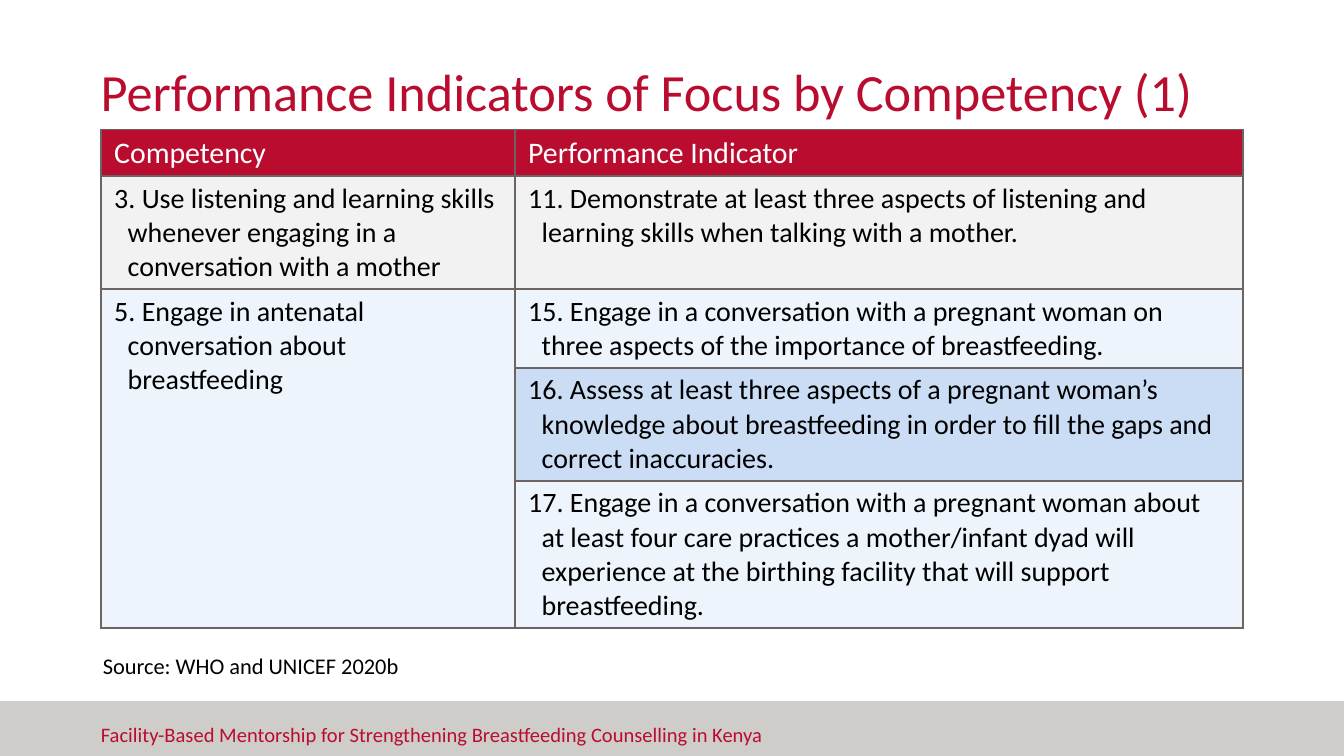
from lxml import etree
from pptx import Presentation
from pptx.dml.color import RGBColor
from pptx.enum.shapes import MSO_SHAPE
from pptx.enum.text import MSO_ANCHOR, PP_ALIGN
from pptx.oxml.ns import qn
from pptx.util import Pt

RECTANGLE = MSO_SHAPE.RECTANGLE
TOP, BOTTOM = MSO_ANCHOR.TOP, MSO_ANCHOR.BOTTOM
LEFT = PP_ALIGN.LEFT

FONT = "Calibri"
RED, WHITE, BLACK = "BA0C2F", "FFFFFF", "000000"
BAND_GREY, BORDER_GREY = "CFCDC9", "6C6463"
ROW_GREY, PALE_BLUE, MID_BLUE = "F2F2F2", "EDF4FB", "CADDF4"

COLUMN_WIDTHS = (221.8, 390.2)
HEADER = ("Competency", "Performance Indicator")
HEADER_HEIGHT = 24.6
# Each competency: text, fill, and its indicators as (text, fill, row height)
COMPETENCIES = [
    ("3. Use listening and learning skills whenever engaging in a conversation with a mother", ROW_GREY, [
        ("11. Demonstrate at least three aspects of listening and learning skills "
         "when talking with a mother.", ROW_GREY, 60.5),
    ]),
    ("5. Engage in antenatal conversation about breastfeeding", PALE_BLUE, [
        ("15. Engage in a conversation with a pregnant woman on three aspects of "
         "the importance of breastfeeding.", PALE_BLUE, 42.3),
        ("16. Assess at least three aspects of a pregnant woman’s knowledge about "
         "breastfeeding in order to fill the gaps and correct inaccuracies.", MID_BLUE, 60.5),
        ("17. Engage in a conversation with a pregnant woman about at least four care "
         "practices a mother/infant dyad will experience at the birthing facility that "
         "will support breastfeeding.", PALE_BLUE, 78.8),
    ]),
]


def color(hex_string):
    return RGBColor.from_string(hex_string)


def write(paragraph, text, size, text_color):
    paragraph.alignment = LEFT
    run = paragraph.add_run()
    run.text = text
    run.font.name = FONT
    run.font.size = Pt(size)
    run.font.bold = False
    run.font.color.rgb = color(text_color)


def add_text(slide, box, text, size, text_color, insets, anchor=TOP):
    frame = slide.shapes.add_textbox(*map(Pt, box)).text_frame
    frame.word_wrap = True
    frame.vertical_anchor = anchor
    frame.margin_left, frame.margin_top, frame.margin_right, frame.margin_bottom = map(Pt, insets)
    write(frame.paragraphs[0], text, size, text_color)


def add_footer(slide, box):
    left, top, width, height = box
    band = slide.shapes.add_shape(RECTANGLE, *map(Pt, box))
    band.shadow.inherit = False
    band.fill.solid()
    band.fill.fore_color.rgb = color(BAND_GREY)
    band.line.fill.background()
    add_text(slide, (left + 54, top + 7.5, 400, height),
             "Facility-Based Mentorship for Strengthening Breastfeeding Counselling in Kenya",
             11, RED, (0, 3.6, 7.2, 3.6))


def add_borders(cell):
    properties = cell._tc.get_or_add_tcPr()
    for position, side in enumerate(("a:lnL", "a:lnR", "a:lnT", "a:lnB")):
        line = etree.Element(qn(side), w=str(Pt(1)))
        fill = etree.SubElement(line, qn("a:solidFill"))
        etree.SubElement(fill, qn("a:srgbClr"), val=BORDER_GREY)
        properties.insert(position, line)


def style_cell(cell, fill):
    cell.margin_left = cell.margin_right = Pt(7.2)
    cell.margin_top = cell.margin_bottom = Pt(2.88)
    cell.vertical_anchor = TOP
    cell.fill.solid()
    cell.fill.fore_color.rgb = color(fill)
    add_borders(cell)


def write_entry(cell, text):
    """Write a numbered entry with a hanging indent."""
    paragraph = cell.text_frame.paragraphs[0]
    properties = paragraph._p.get_or_add_pPr()
    properties.set("marL", str(Pt(7.2)))
    properties.set("indent", str(Pt(-7.2)))
    write(paragraph, text, 15, BLACK)


def add_indicator_table(slide, left, top):
    heights = [HEADER_HEIGHT] + [height for _, _, indicators in COMPETENCIES
                                 for _, _, height in indicators]
    table = slide.shapes.add_table(len(heights), len(COLUMN_WIDTHS), Pt(left), Pt(top),
                                   Pt(sum(COLUMN_WIDTHS)), Pt(sum(heights))).table
    table.horz_banding = False
    for column, width in zip(table.columns, COLUMN_WIDTHS):
        column.width = Pt(width)
    for row, height in zip(table.rows, heights):
        row.height = Pt(height)
    for index, text in enumerate(HEADER):
        cell = table.cell(0, index)
        style_cell(cell, RED)
        write(cell.text_frame.paragraphs[0], text, 16, WHITE)
    first = 1
    for competency, competency_fill, indicators in COMPETENCIES:
        last = first + len(indicators) - 1
        for row, (indicator, fill, _) in enumerate(indicators, first):
            style_cell(table.cell(row, 0), competency_fill)
            style_cell(table.cell(row, 1), fill)
            write_entry(table.cell(row, 1), indicator)
        write_entry(table.cell(first, 0), competency)
        if last > first:
            table.cell(first, 0).merge(table.cell(last, 0))
        first = last + 1


def main():
    presentation = Presentation()
    presentation.slide_width, presentation.slide_height = Pt(720), Pt(405)
    slide = presentation.slides.add_slide(presentation.slide_layouts[6])
    add_footer(slide, (0, 375.6, 720, 29.4))
    add_text(slide, (54, 11.5, 612, 54), "Performance Indicators of Focus by Competency (1)",
             28, RED, (0, 0, 0, 0), BOTTOM)
    add_indicator_table(slide, 54, 69.4)
    add_text(slide, (48, 345.6, 500, 21.8), "Source: WHO and UNICEF 2020b",
             12, BLACK, (7.2, 3.6, 7.2, 3.6))
    presentation.save("out.pptx")


if __name__ == "__main__":
    main()
